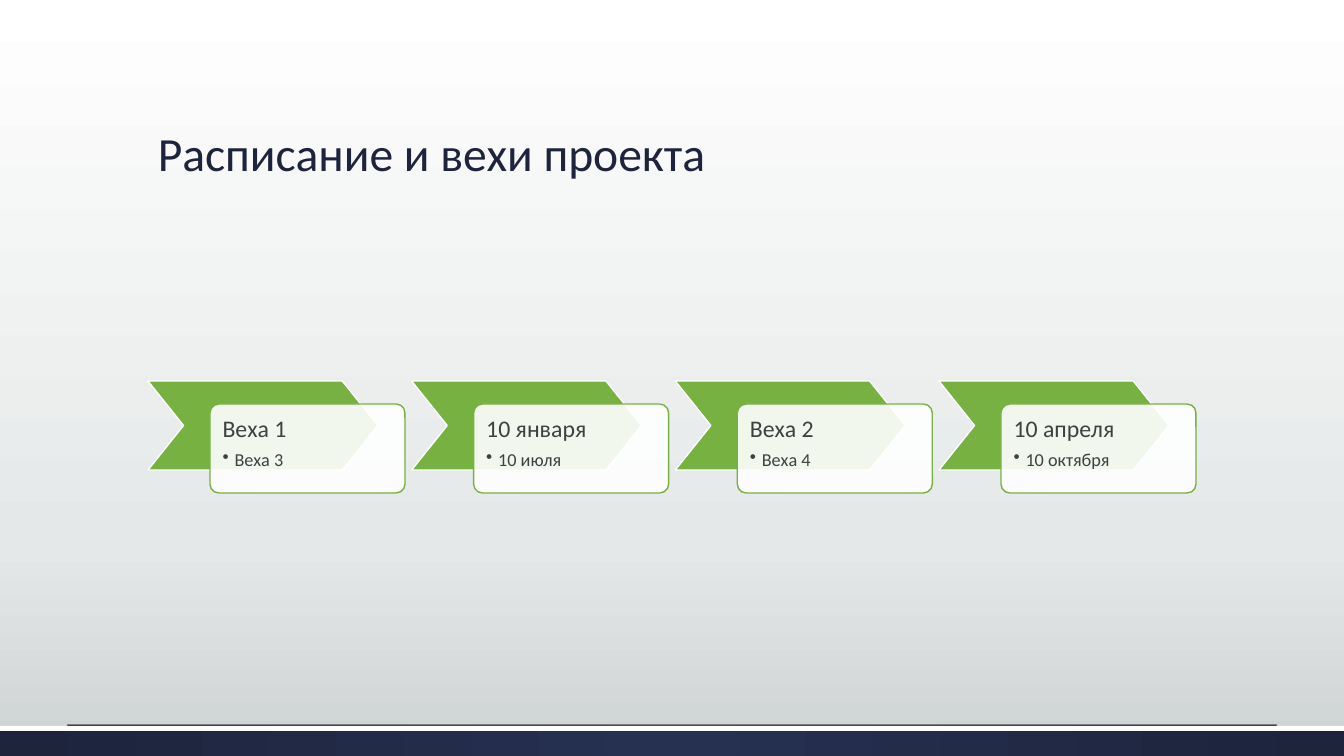
from lxml import etree
from pptx import Presentation
from pptx.dml.color import RGBColor
from pptx.enum.shapes import MSO_CONNECTOR, MSO_SHAPE
from pptx.enum.text import MSO_ANCHOR, PP_ALIGN
from pptx.oxml.ns import qn
from pptx.util import Emu, Pt

CHEVRON = MSO_SHAPE.CHEVRON
RECTANGLE = MSO_SHAPE.RECTANGLE
ROUNDED = MSO_SHAPE.ROUNDED_RECTANGLE
STRAIGHT = MSO_CONNECTOR.STRAIGHT
TOP, BOTTOM = MSO_ANCHOR.TOP, MSO_ANCHOR.BOTTOM
LEFT = PP_ALIGN.LEFT

TITLE = "Расписание и вехи проекта"
MILESTONES = [
    ("Веха 1", "Веха 3"),
    ("10 января", "10 июля"),
    ("Веха 2", "Веха 4"),
    ("10 апреля", "10 октября"),
]
FONT = "Calibri"
NAVY, GREEN, GRAY, WHITE = "1D243C", "77B142", "404040", "FFFFFF"
BACKGROUND_STOPS = [(0, "FFFFFF"), (72, "E5E8E8"), (100, "CDD2D2")]
FOOTER_STOPS = [(0, "263050"), (100, NAVY)]

SLIDE_WIDTH, SLIDE_HEIGHT = 1344, 756
MARGIN, CONTENT_WIDTH = 148, 1048
FOOTER_TOP = 726
CHEVRON_TOP, CHEVRON_WIDTH, STEP_HEIGHT = 381, 230, 89
CARD_SHIFT, CARD_DROP, CARD_WIDTH = 62, 23, 195
CARD_INSET, BULLET_INDENT = 10, 12


def px(value):
    return Emu(round(value * 914400 / 100.8))


def color(value):
    return RGBColor.from_string(value)


def set_gradient(fill, parent, stops, radial=False):
    fill.gradient()
    gradient = parent.find(".//" + qn("a:gradFill"))
    gradient.clear()
    stop_list = etree.SubElement(gradient, qn("a:gsLst"))
    for position, value in stops:
        stop = etree.SubElement(stop_list, qn("a:gs"), pos=str(position * 1000))
        etree.SubElement(stop, qn("a:srgbClr"), val=value)
    if radial:
        center = etree.SubElement(gradient, qn("a:path"), path="circle")
        sides = dict.fromkeys("ltrb", "50000")
        etree.SubElement(center, qn("a:fillToRect"), **sides)
    else:
        etree.SubElement(gradient, qn("a:lin"), ang="5400000", scaled="0")


def add_shape(slide, kind, box, fill=None, line=None, adjustment=None):
    shape = slide.shapes.add_shape(kind, *map(px, box))
    shape.shadow.inherit = False
    if fill:
        shape.fill.solid()
        shape.fill.fore_color.rgb = color(fill)
    if line:
        shape.line.color.rgb = color(line)
        shape.line.width = Pt(1)
    else:
        shape.line.fill.background()
    if adjustment is not None:
        shape.adjustments[0] = adjustment
    return shape


def write(paragraph, text, size, value, space_after=0):
    paragraph.alignment = LEFT
    paragraph.line_spacing = 0.9
    paragraph.space_after = Pt(space_after)
    run = paragraph.add_run()
    run.text = text
    run.font.name = FONT
    run.font.size = Pt(size)
    run.font.color.rgb = color(value)


def add_bullet(paragraph):
    properties = paragraph._p.get_or_add_pPr()
    properties.set("marL", str(px(BULLET_INDENT)))
    properties.set("indent", str(-px(BULLET_INDENT)))
    etree.SubElement(properties, qn("a:buChar"), char="•")


def add_footer(slide):
    line = slide.shapes.add_connector(STRAIGHT, px(67), px(725), px(1277), px(725))
    line.line.color.rgb = color("7F7F7F")
    line.line.width = Pt(0.75)
    etree.SubElement(line._element.spPr, qn("a:effectLst"))
    height = SLIDE_HEIGHT - FOOTER_TOP
    bar = add_shape(slide, RECTANGLE, (0, FOOTER_TOP, SLIDE_WIDTH, height))
    set_gradient(bar.fill, bar._element, FOOTER_STOPS, radial=True)
    add_shape(slide, RECTANGLE, (0, FOOTER_TOP, SLIDE_WIDTH, 5), WHITE)


def add_title(slide):
    title = slide.shapes.add_textbox(*map(px, (MARGIN, 51, CONTENT_WIDTH, 136)))
    title.text_frame.word_wrap = True
    title.text_frame.vertical_anchor = BOTTOM
    write(title.text_frame.paragraphs[0], TITLE, 34, NAVY)


def add_milestone(slide, left, heading, detail):
    add_shape(slide, CHEVRON, (left, CHEVRON_TOP, CHEVRON_WIDTH, STEP_HEIGHT),
              GREEN, WHITE, 0.4)
    card_box = (left + CARD_SHIFT, CHEVRON_TOP + CARD_DROP, CARD_WIDTH, STEP_HEIGHT)
    card = add_shape(slide, ROUNDED, card_box, WHITE, GREEN, 0.1)
    fill_color = card._element.spPr.find(qn("a:solidFill"))[0]
    etree.SubElement(fill_color, qn("a:alpha"), val="90000")
    frame = card.text_frame
    frame.word_wrap = True
    frame.vertical_anchor = TOP
    frame.margin_left = frame.margin_right = px(CARD_INSET)
    frame.margin_top = frame.margin_bottom = px(CARD_INSET)
    write(frame.paragraphs[0], heading, 17, GRAY, 6)
    bullet = frame.add_paragraph()
    write(bullet, detail, 13, GRAY, 2)
    add_bullet(bullet)


def main():
    presentation = Presentation()
    presentation.slide_width = px(SLIDE_WIDTH)
    presentation.slide_height = px(SLIDE_HEIGHT)
    slide = presentation.slides.add_slide(presentation.slide_layouts[6])
    set_gradient(slide.background.fill, slide._element, BACKGROUND_STOPS)
    add_footer(slide)
    add_title(slide)
    card_span = CARD_SHIFT + CARD_WIDTH
    pitch = (CONTENT_WIDTH - card_span) / (len(MILESTONES) - 1)
    for index, (heading, detail) in enumerate(MILESTONES):
        add_milestone(slide, MARGIN + index * pitch, heading, detail)
    presentation.save("out.pptx")


if __name__ == "__main__":
    main()
